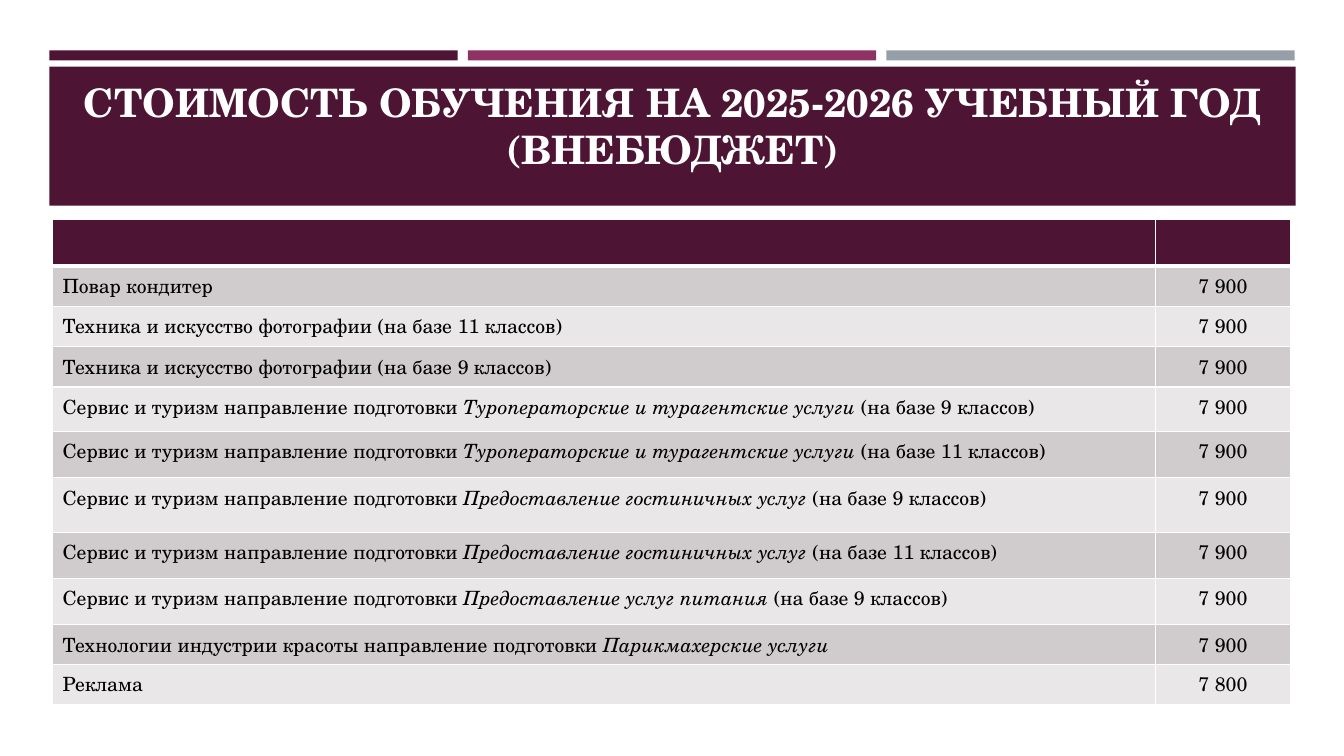
"""Build the tuition fee slide."""
from lxml import etree
from pptx import Presentation
from pptx.dml.color import RGBColor
from pptx.enum import shapes, text
from pptx.oxml import ns
from pptx.util import Inches, Pt

HUES = {"plum": "4D1434", "rose": "903163", "steel": "969FA7",
        "dark": "D0CCCE", "light": "E9E7E8", "white": "FFFFFF",
        "black": "000000"}
FACE = "TeX Gyre Schola"
HEAD = {"size": Pt(28), "bold": True}
BODY = {"size": Pt(14), "bold": False}
TOUR = "Сервис и туризм направление подготовки "
ROWS = [
    (0.4, "Повар кондитер", "7 900"),
    (0.4, "Техника и искусство фотографии (на базе 11 классов)", "7 900"),
    (0.4, "Техника и искусство фотографии (на базе 9 классов)", "7 900"),
    (0.44, TOUR + "*Туроператорские и турагентские услуги* (на базе 9 классов)", "7 900"),
    (0.46, TOUR + "*Туроператорские и турагентские услуги* (на базе 11 классов)", "7 900"),
    (0.54, TOUR + "*Предоставление гостиничных услуг* (на базе 9 классов)", "7 900"),
    (0.46, TOUR + "*Предоставление гостиничных услуг* (на базе 11 классов)", "7 900"),
    (0.46, TOUR + "*Предоставление услуг питания* (на базе 9 классов)", "7 900"),
    (0.39, "Технологии индустрии красоты направление подготовки "
           "*Парикмахерские услуги*", "7 900"),
    (0.4, "Реклама", "7 800"),
]


def paint(fill, hue):
    """Make a fill solid in a named colour."""
    fill.solid()
    fill.fore_color.rgb = RGBColor.from_string(HUES[hue])


def add_bar(slide, hue, *box):
    """Add a plain filled rectangle."""
    bar = slide.shapes.add_shape(shapes.MSO_SHAPE.RECTANGLE, *map(Inches, box))
    bar.shadow.inherit = False
    paint(bar.fill, hue)
    bar.line.fill.background()


def write(frame, words, hue, style, align):
    """Write one paragraph, with words between asterisks in italics."""
    para = frame.paragraphs[0]
    para.alignment = align
    for i, part in enumerate(words.split("*")):
        if part:
            run = para.add_run()
            run.text = part
            look = {"name": FACE, "italic": i % 2 == 1, **style}
            for key, value in look.items():
                setattr(run.font, key, value)
            run.font.color.rgb = RGBColor.from_string(HUES[hue])


def add_title(slide, words, *box):
    """Add the centred heading."""
    frame = slide.shapes.add_textbox(*map(Inches, box)).text_frame
    look = {"word_wrap": True, "vertical_anchor": text.MSO_ANCHOR.BOTTOM}
    for key, value in look.items():
        setattr(frame, key, value)
    write(frame, words, "white", HEAD, text.PP_ALIGN.CENTER)


def edge(cell, **widths):
    """Draw white cell borders with the given widths in points."""
    props = cell._tc.get_or_add_tcPr()
    for i, (side, width) in enumerate(widths.items()):
        line = etree.Element(ns.qn("a:ln" + side), w=str(Pt(width)))
        fill = etree.SubElement(line, ns.qn("a:solidFill"))
        etree.SubElement(fill, ns.qn("a:srgbClr"), val=HUES["white"])
        props.insert(i, line)


def add_fees(slide, *box):
    """Add the table of courses and fees."""
    rows = [(0.46, "", "")] + ROWS
    table = slide.shapes.add_table(len(rows), 2, *map(Inches, box)).table
    aligns = text.PP_ALIGN.LEFT, text.PP_ALIGN.CENTER
    for col, width in zip(table.columns, (10.94, 1.34)):
        col.width = Inches(width)
    for r, (height, *words) in enumerate(rows):
        table.rows[r].height = Inches(height)
        hue = "plum" if r == 0 else ("light", "dark")[r % 2]
        for c, word in enumerate(words):
            cell = table.cell(r, c)
            paint(cell.fill, hue)
            edge(cell, L=1, R=1, T=3 if r == 1 else 1, B=3 if r == 0 else 1)
            write(cell.text_frame, word, "black", BODY, aligns[c])


def main():
    """Build and save the slide."""
    deck = Presentation()
    deck.slide_width, deck.slide_height = Inches(13.33), Inches(7.5)
    slide = deck.slides.add_slide(deck.slide_layouts[6])
    for i, hue in enumerate(("plum", "rose", "steel")):
        add_bar(slide, hue, 0.49 + 4.15 * i, 0.5, 4.05, 0.1)
    add_bar(slide, "plum", 0.49, 0.66, 12.36, 1.38)
    add_title(slide, "СТОИМОСТЬ ОБУЧЕНИЯ НА 2025-2026 УЧЕБНЫЙ ГОД (ВНЕБЮДЖЕТ)",
              0.64, 0.68, 12.06, 1.08)
    add_fees(slide, 0.52, 2.18, 12.28, 4.8)
    deck.save("out.pptx")


if __name__ == "__main__":
    main()
